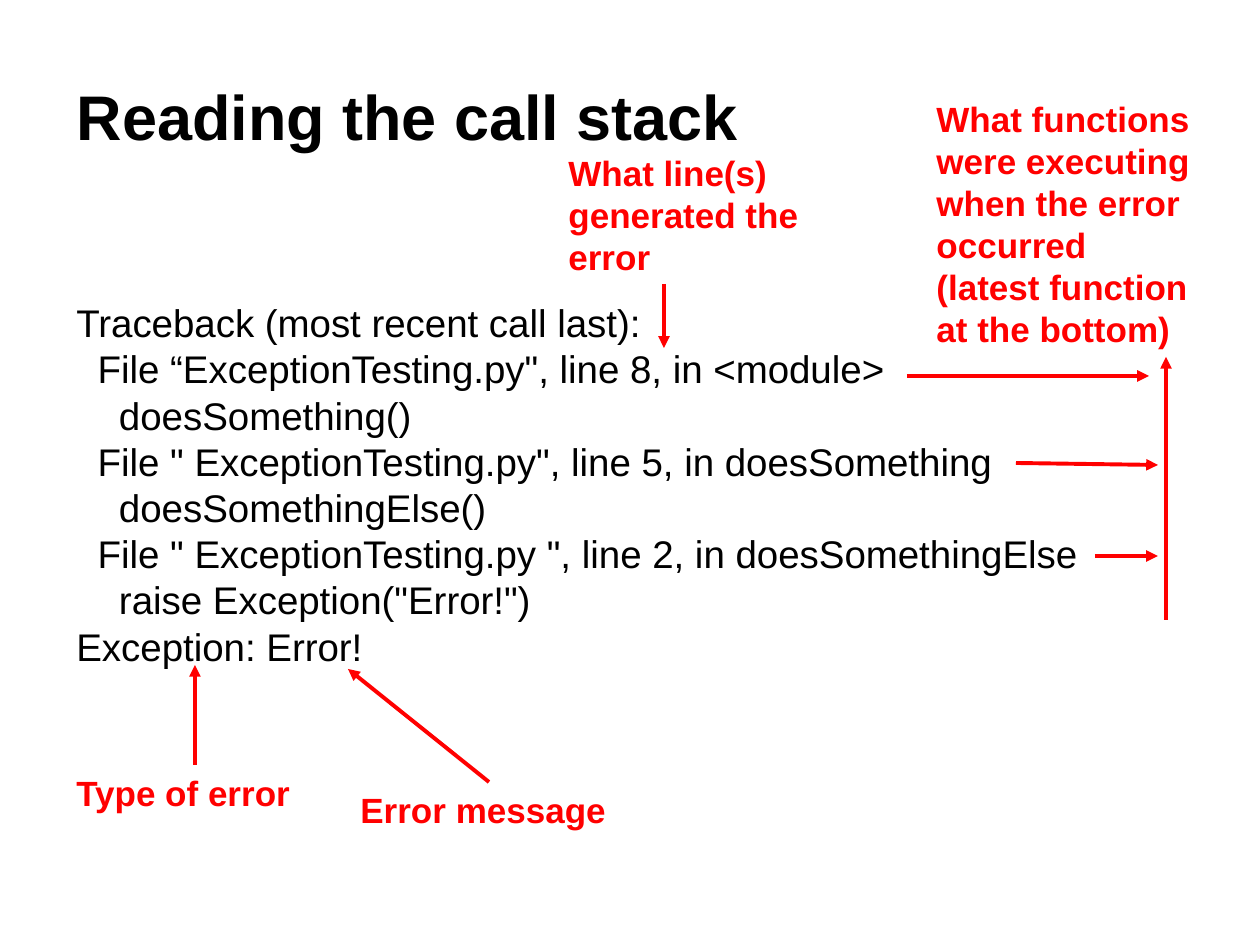
from pptx import Presentation
from pptx.dml.color import RGBColor
from pptx.enum.shapes import MSO_CONNECTOR
from pptx.enum.text import MSO_ANCHOR, MSO_AUTO_SIZE, PP_ALIGN
from pptx.oxml.ns import qn
from pptx.util import Emu, Pt
from lxml.etree import SubElement

PIXELS_PER_INCH = 126
BLACK = RGBColor(0x00, 0x00, 0x00)
RED = RGBColor(0xFF, 0x00, 0x00)
FONT_NAME = "Arial"

TRACEBACK = """Traceback (most recent call last):
  File “ExceptionTesting.py", line 8, in <module>
    doesSomething()
  File " ExceptionTesting.py", line 5, in doesSomething
    doesSomethingElse()
  File " ExceptionTesting.py ", line 2, in doesSomethingElse
    raise Exception("Error!")
Exception: Error!"""

# Text, then left, top, width, height
LABELS = [
    ("Type of error", (64, 765, 261, 55)),
    ("Error message", (348, 782, 282, 55)),
    ("What line(s) generated the error", (556, 145, 282, 140)),
    ("What functions were executing when the error occurred "
     "(latest function at the bottom)", (924, 91, 282, 267)),
]

# Start, then the point of the arrowhead
ARROWS = [
    ((664, 284), (664, 348)),    # line number
    ((489, 782), (348, 669)),    # error message
    ((195, 765), (195, 665)),    # type of error
    ((1166, 620), (1166, 357)),  # order of the calls
    ((1095, 556), (1158, 556)),  # doesSomethingElse
    ((1016, 463), (1158, 465)),  # doesSomething
    ((907, 376), (1149, 376)),   # module
]


def px(length):
    return Emu(round(length * 914400 / PIXELS_PER_INCH))


def set_font(paragraph, size, color, bold=False):
    font = paragraph.font
    font.name = FONT_NAME
    font.size = Pt(size)
    font.bold = bold
    font.color.rgb = color


def add_title(slide, text, box):
    title = slide.shapes.title
    title.left, title.top, title.width, title.height = map(px, box)
    frame = title.text_frame
    frame.text = text
    frame.auto_size = MSO_AUTO_SIZE.NONE
    frame.vertical_anchor = MSO_ANCHOR.BOTTOM
    paragraph = frame.paragraphs[0]
    paragraph.alignment = PP_ALIGN.LEFT
    paragraph.line_spacing = 0.9
    set_font(paragraph, 36, BLACK, bold=True)


def add_text(slide, text, box, size, color, bold=False):
    """Add a text box with one paragraph for each line of text."""
    frame = slide.shapes.add_textbox(*map(px, box)).text_frame
    frame.word_wrap = True
    frame.auto_size = MSO_AUTO_SIZE.SHAPE_TO_FIT_TEXT
    frame.text = text
    for paragraph in frame.paragraphs:
        set_font(paragraph, size, color, bold)


def add_arrow(slide, start, end):
    arrow = slide.shapes.add_connector(
        MSO_CONNECTOR.STRAIGHT, *map(px, start + end))
    arrow.line.color.rgb = RED
    arrow.line.width = Pt(2.25)
    properties = arrow.element.spPr
    SubElement(properties.find(qn("a:ln")), qn("a:tailEnd"), type="triangle")
    SubElement(properties, qn("a:effectLst"))


def main():
    presentation = Presentation()
    presentation.slide_width = px(1260)
    presentation.slide_height = px(945)
    slide = presentation.slides.add_slide(presentation.slide_layouts[5])

    add_title(slide, "Reading the call stack", (64, 77, 1071, 84))
    add_text(slide, TRACEBACK, (64, 293, 1120, 383), 22, BLACK)
    for text, box in LABELS:
        add_text(slide, text, box, 20, RED, bold=True)
    for start, end in ARROWS:
        add_arrow(slide, start, end)

    presentation.save("out.pptx")


if __name__ == "__main__":
    main()
